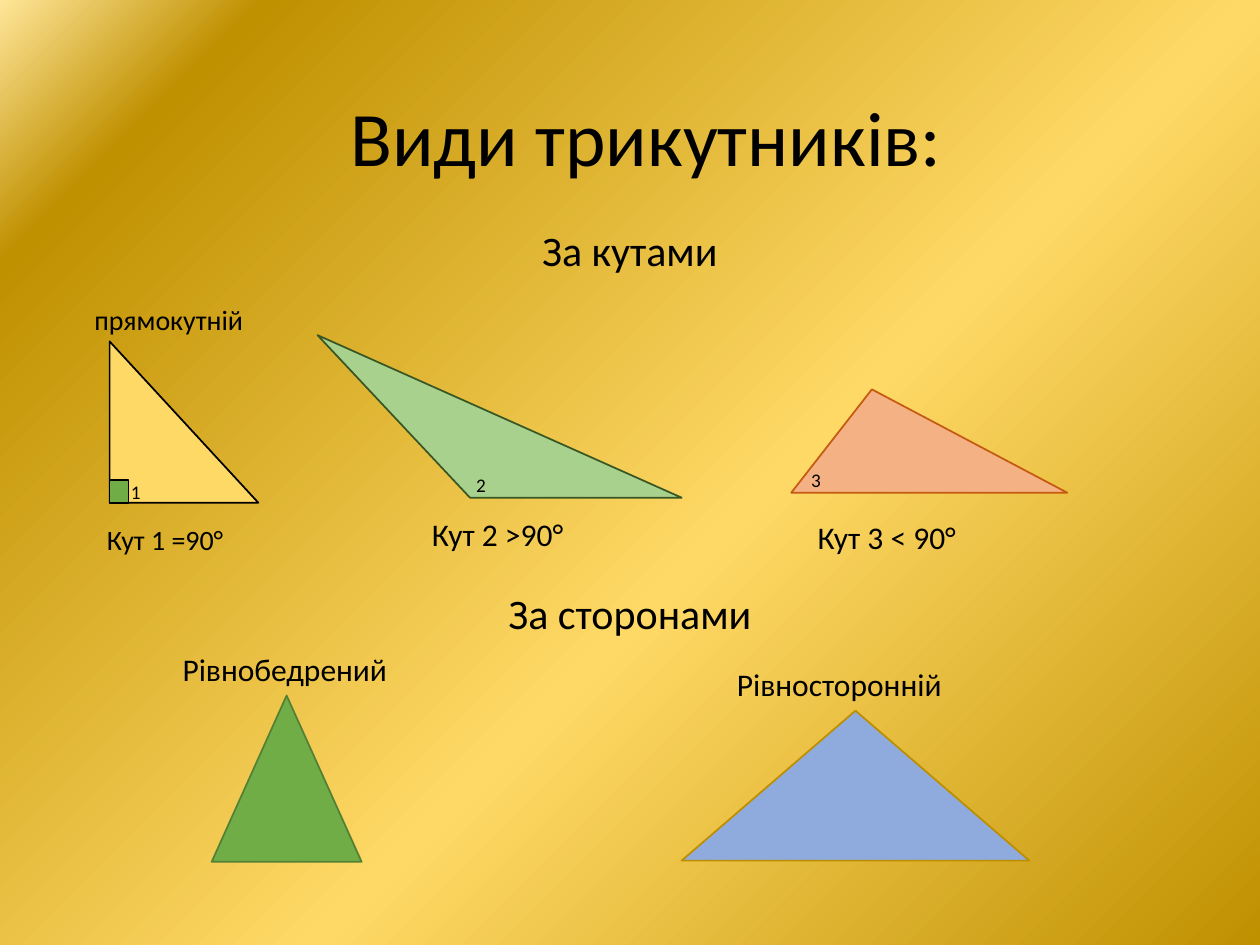
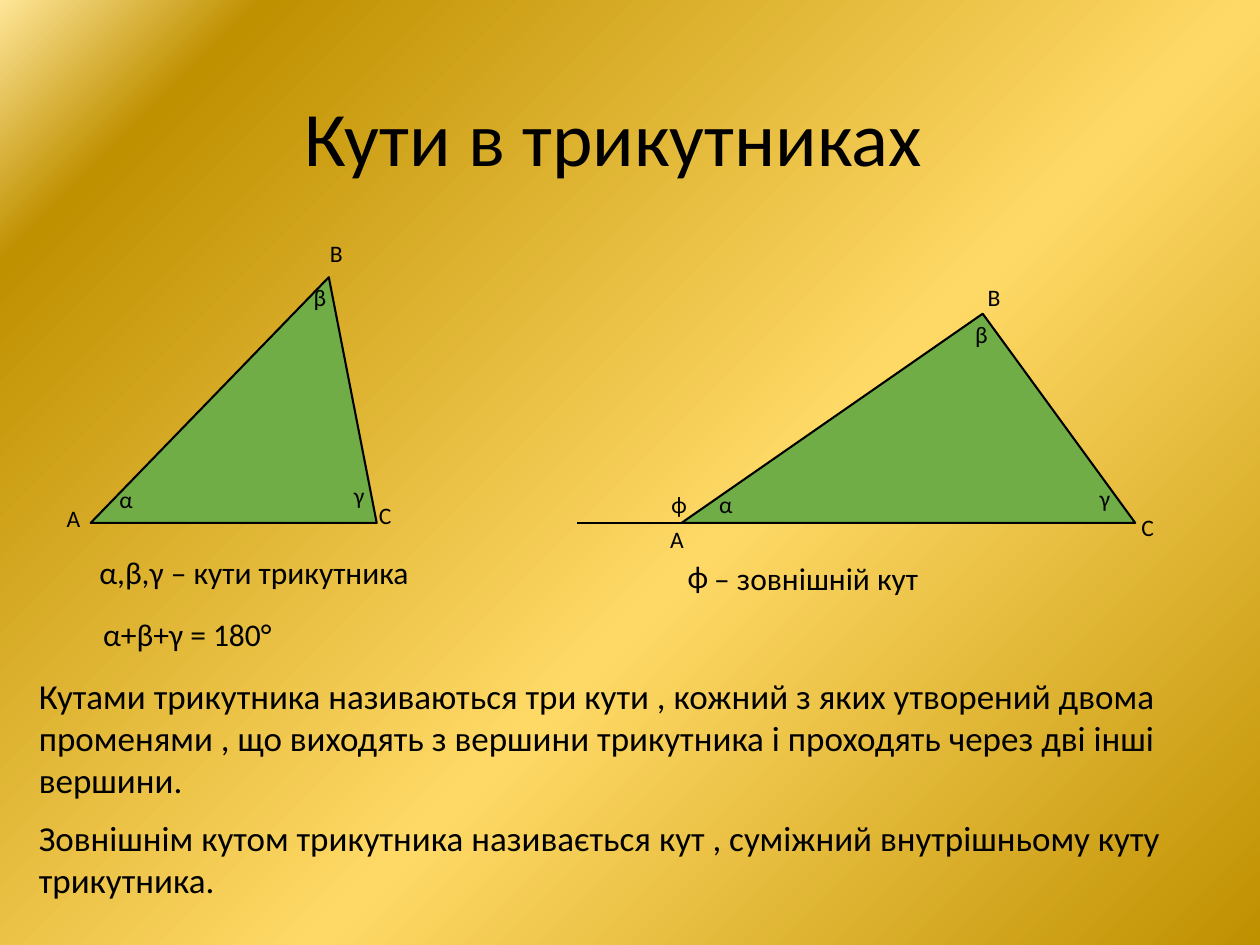
from dataclasses import dataclass

from lxml import etree
from pptx import Presentation
from pptx.dml.color import RGBColor
from pptx.enum import shapes, text
from pptx.oxml.ns import qn
from pptx.util import Inches, Pt


@dataclass(frozen=True)
class Theme:
    font: str = "Calibri"
    ink: str = "000000"
    green: str = "70AD47"
    dark_green: str = "538035"
    gold: str = "FFD966"
    dark_gold: str = "BD8E00"
    mint: str = "A9D18E"
    forest: str = "385723"
    peach: str = "F4B183"
    rust: str = "C55A11"
    blue: str = "8FAADC"
    background: tuple = ((0, "BF9000"), (43, "FFD966"), (88, "BF9000"), (100, "FFE699"))
    title: float = 44
    heading: float = 24
    body: float = 20
    caption: float = 18
    small_caption: float = 16
    vertex: float = 13.5
    angle: float = 11
    thin: float = 1
    bold_line: float = 1.2


THEME = Theme()
LETTER_BOX = (0.4, 0.37)


def rgb(color):
    return RGBColor.from_string(color)


def add_text(slide, box, words, size=THEME.caption, align=text.PP_ALIGN.LEFT,
             anchor=text.MSO_ANCHOR.TOP, spacing=None):
    frame = slide.shapes.add_textbox(*map(Inches, box)).text_frame
    frame.word_wrap = True
    frame.vertical_anchor = anchor
    paragraph = frame.paragraphs[0]
    paragraph.alignment = align
    if spacing:
        paragraph.line_spacing = spacing
    run = paragraph.add_run()
    run.text = words
    run.font.name = THEME.font
    run.font.size = Pt(size)
    run.font.color.rgb = rgb(THEME.ink)


def paint(shape, fill, line, width=THEME.thin):
    shape.shadow.inherit = False
    shape.fill.solid()
    shape.fill.fore_color.rgb = rgb(fill)
    shape.line.color.rgb = rgb(line)
    shape.line.width = Pt(width)


def add_preset(slide, kind, box, fill, line):
    paint(slide.shapes.add_shape(kind, *map(Inches, box)), fill, line)


def add_triangle(slide, corners, fill, line, width=THEME.thin):
    points = [(Inches(x), Inches(y)) for x, y in corners]
    builder = slide.shapes.build_freeform(*points[0], scale=1.0)
    builder.add_line_segments(points[1:], close=True)
    paint(builder.convert_to_shape(), fill, line, width)


def add_line(slide, start, end):
    line = slide.shapes.add_connector(
        shapes.MSO_CONNECTOR.STRAIGHT, *map(Inches, start + end))
    line.line.color.rgb = rgb(THEME.ink)
    line.line.width = Pt(THEME.bold_line)
    etree.SubElement(line._element.spPr, qn("a:effectLst"))


def set_background(slide):
    """Fill the slide with a circular gradient centred on the bottom right corner."""
    fill = slide.background.fill
    fill.gradient()
    gradient = slide._element.find(".//" + qn("a:gradFill"))
    for child in list(gradient):
        gradient.remove(child)
    stops = etree.SubElement(gradient, qn("a:gsLst"))
    for percent, color in THEME.background:
        stop = etree.SubElement(stops, qn("a:gs"), pos=str(percent * 1000))
        etree.SubElement(stop, qn("a:srgbClr"), val=color)
    circle = etree.SubElement(gradient, qn("a:path"), path="circle")
    etree.SubElement(circle, qn("a:fillToRect"), l="100000", t="100000")
    etree.SubElement(gradient, qn("a:tileRect"), r="-100000", b="-100000")


def start_slide(deck, title, title_left):
    slide = deck.slides.add_slide(deck.slide_layouts[6])
    set_background(slide)
    add_text(slide, (title_left, 0.4, 8.62, 1.45), title, size=THEME.title,
             align=text.PP_ALIGN.CENTER, anchor=text.MSO_ANCHOR.MIDDLE, spacing=0.9)
    return slide


def add_heading(slide, top, words):
    add_text(slide, (3.2, top, 3.6, 0.5), words, size=THEME.heading,
             align=text.PP_ALIGN.CENTER)


def add_labels(slide, left, top, labels, size):
    """Place each letter at its offset from the figure's corner."""
    for letter, dx, dy in labels:
        add_text(slide, (left + dx, top + dy, *LETTER_BOX), letter, size=size)


def add_right_triangle(slide, left, top, width, height):
    mark_width, mark_height = 0.15, 0.18
    base = top + height
    add_preset(slide, shapes.MSO_SHAPE.RIGHT_TRIANGLE, (left, top, width, height),
               THEME.gold, THEME.ink)
    add_preset(slide, shapes.MSO_SHAPE.RECTANGLE,
               (left, base - mark_height, mark_width, mark_height),
               THEME.green, THEME.ink)
    add_labels(slide, left, top, [("1", 0.07, 1.05)], THEME.angle)
    add_text(slide, (left - 0.22, top - 0.36, 1.63, 0.37), "прямокутній",
             size=THEME.small_caption)
    add_text(slide, (left - 0.12, base + 0.11, 1.44, 0.37), "Кут 1 =90°",
             size=THEME.small_caption)


def add_angle_triangle(slide, box, base_start, apex, colors, label, caption):
    """Draw a triangle whose base ends at the box's bottom right corner."""
    left, top, width, height = box
    base = top + height
    add_triangle(slide, [(left + base_start, base), (left + apex, top),
                         (left + width, base)], *colors)
    add_labels(slide, left, top, [label], THEME.angle)
    words, dx, dy = caption
    add_text(slide, (left + dx, base + dy, 1.89, 0.4), words)


def add_side_triangle(slide, box, colors, name, name_left):
    left, top, width, height = box
    add_preset(slide, shapes.MSO_SHAPE.ISOSCELES_TRIANGLE, box, *colors)
    add_text(slide, (left + name_left, top - 0.41, 2.08, 0.4), name)


def add_lettered_triangle(slide, box, apex, labels):
    left, top, width, height = box
    base = top + height
    add_triangle(slide, [(left, base), (left + apex, top), (left + width, base)],
                 THEME.green, THEME.ink, THEME.bold_line)
    add_labels(slide, left, top, labels, THEME.vertex)


def add_inner_angles(slide, left, top):
    add_lettered_triangle(
        slide, (left, top, 2.27, 1.95), 1.89,
        [("β", 1.67, 0), ("α", 0.13, 1.6), ("γ", 1.99, 1.57),
         ("А", -0.29, 1.75), ("В", 1.8, -0.35), ("С", 2.19, 1.73)])
    add_text(slide, (left - 0.03, top + 2.14, 2.86, 0.4), "α,β,γ – кути трикутника")
    add_text(slide, (left, top + 2.63, 2.25, 0.4), "α+β+γ = 180°")


def add_outer_angle(slide, left, top):
    height = 1.66
    base = top + height
    add_line(slide, (left, base), (left - 0.83, base))
    add_lettered_triangle(
        slide, (left, top, 3.6, height), 2.39,
        [("β", 2.23, 0), ("α", 0.2, 1.35), ("γ", 3.22, 1.3), ("ϕ", -0.18, 1.35),
         ("А", -0.19, 1.63), ("В", 2.33, -0.29), ("С", 3.55, 1.53)])
    add_text(slide, (left - 0.05, top + 1.88, *LETTER_BOX), "ϕ")
    add_text(slide, (left + 0.16, top + 1.9, 2.36, 0.4), "– зовнішній кут")


def build_kinds(deck):
    slide = start_slide(deck, "Види трикутників:", 0.82)
    add_heading(slide, 1.73, "За кутами")
    add_right_triangle(slide, 0.87, 2.71, 1.18, 1.28)
    add_angle_triangle(slide, (2.52, 2.66, 2.89, 1.29), 1.21, 0,
                       (THEME.mint, THEME.forest), ("2", 1.16, 1.05),
                       ("Кут 2 >90°", 0.81, 0.09))
    add_angle_triangle(slide, (6.28, 3.09, 2.19, 0.82), 0, 0.64,
                       (THEME.peach, THEME.rust), ("3", 0.06, 0.58),
                       ("Кут 3 < 90°", 0.11, 0.15))
    add_heading(slide, 4.61, "За сторонами")
    add_side_triangle(slide, (1.68, 5.52, 1.19, 1.32),
                      (THEME.green, THEME.dark_green), "Рівнобедрений", -0.33)
    add_side_triangle(slide, (5.41, 5.64, 2.76, 1.19),
                      (THEME.blue, THEME.dark_gold), "Рівносторонній", 0.34)


def build_angles(deck):
    slide = start_slide(deck, "Кути в трикутниках", 0.56)
    add_inner_angles(slide, 0.72, 2.2)
    add_outer_angle(slide, 5.41, 2.49)
    add_text(slide, (0.21, 5.3, 9.31, 1.11),
             "Кутами трикутника називаються три кути , кожний з яких утворений двома "
             "променями , що виходять з вершини трикутника і проходять через дві інші "
             "вершини.", size=THEME.body)
    add_text(slide, (0.21, 6.43, 9.6, 0.77),
             "Зовнішнім кутом трикутника називається кут , суміжний внутрішньому куту "
             "трикутника.", size=THEME.body)


def main():
    deck = Presentation()
    deck.slide_width, deck.slide_height = Inches(10), Inches(7.5)
    build_kinds(deck)
    build_angles(deck)
    deck.save("out.pptx")


if __name__ == "__main__":
    main()
